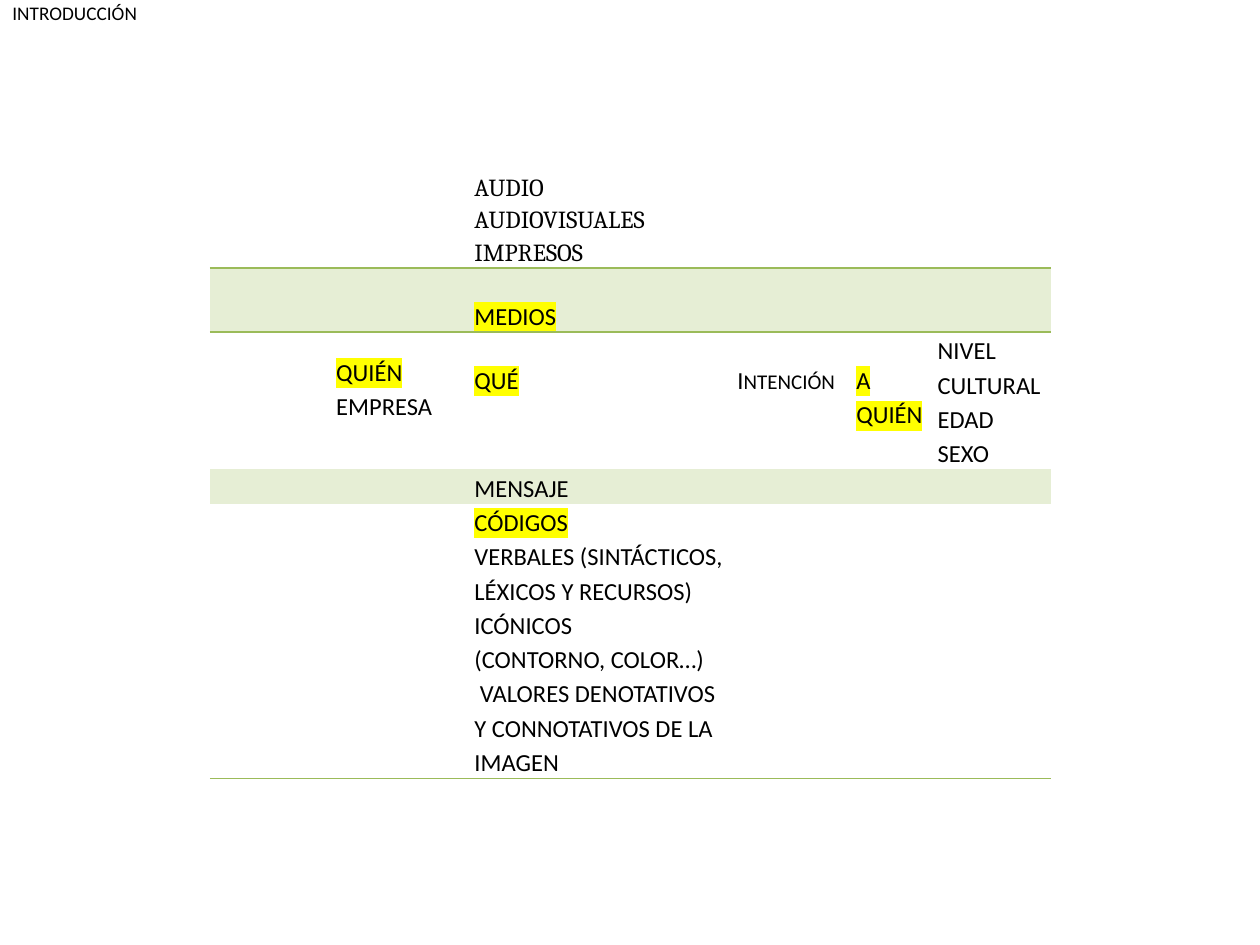
from dataclasses import dataclass

from lxml import etree
from pptx import Presentation
from pptx.dml.color import RGBColor
from pptx.enum.dml import MSO_THEME_COLOR
from pptx.oxml.ns import qn
from pptx.util import Pt

TEXT_COLOR = MSO_THEME_COLOR.TEXT_1
NO_STYLE_NO_GRID = "{2D5ABB26-0587-4C30-8999-92F81FD0307C}"


@dataclass(frozen=True)
class Theme:
    band: str = "E6EED5"
    rule: str = "9BBB59"
    marker: str = "FFFF00"
    sans: str = "Calibri"
    serif: str = "Cambria"
    title: float = 11
    body: float = 14
    small: float = 12


theme = Theme()


def add_color(parent, tag, color):
    """Append a DrawingML element that holds one RGB colour."""
    el = etree.SubElement(parent, qn(tag))
    etree.SubElement(el, qn("a:srgbClr"), val=color)
    return el


def add_rule(cell, side):
    """Draw a thin rule on one side of a cell: lnT or lnB."""
    tc_pr = cell._tc.get_or_add_tcPr()
    ln = etree.Element(qn(f"a:{side}"), w=str(Pt(1)))
    add_color(ln, "a:solidFill", theme.rule)
    tc_pr.insert(0, ln)


prs = Presentation()
prs.slide_width, prs.slide_height = Pt(720), Pt(540)
s = prs.slides.add_slide(prs.slide_layouts[6])

# Communication scheme: each paragraph is a list of (text, size, marked) runs
col_widths = [68.5, 69, 9.75, 150.25, 68, 46.5, 68.5]
row_heights = [56, 36.5, 78.5, 19.6, 157]
BODY = theme.body
contents = {
    (0, 3): [[("AUDIO", BODY, False)], [("AUDIOVISUALES", BODY, False)],
             [("IMPRESOS", BODY, False)]],
    (1, 3): [[("MEDIOS", BODY, True)]],
    (2, 1): [[("QUIÉN", BODY, True)], [("EMPRESA", BODY, False)]],
    (2, 3): [[("QUÉ", BODY, True)]],
    (2, 4): [[("I", BODY, False), ("NTENCIÓN", theme.small, False)]],
    (2, 5): [[("A QUIÉN", BODY, True)]],
    (2, 6): [[("NIVEL CULTURAL", BODY, False)], [("EDAD", BODY, False)],
             [("SEXO", BODY, False)]],
    (3, 3): [[("MENSAJE", BODY, False)]],
    (4, 3): [[("CÓDIGOS", BODY, True)],
             [("VERBALES (SINTÁCTICOS, LÉXICOS Y RECURSOS)", BODY, False)],
             [("ICÓNICOS", BODY, False)],
             [("(CONTORNO, COLOR…)", BODY, False)],
             [(" VALORES DENOTATIVOS Y CONNOTATIVOS DE LA IMAGEN", BODY, False)]],
}
top_margins = {(1, 3): 17, (2, 1): 12.5, (2, 3): 17, (2, 4): 17, (2, 5): 17}
banded_rows = (1, 3)

frame = s.shapes.add_table(len(row_heights), len(col_widths), Pt(120), Pt(97.2),
                           Pt(sum(col_widths)), Pt(sum(row_heights)))
table = frame.table
table.first_row = table.horz_banding = False
table._tbl.tblPr.find(qn("a:tableStyleId")).text = NO_STYLE_NO_GRID
for column, width in zip(table.columns, col_widths):
    column.width = Pt(width)

for i, height in enumerate(row_heights):
    table.rows[i].height = Pt(height)
    for j in range(len(col_widths)):
        cell = table.cell(i, j)
        cell.margin_left = cell.margin_right = Pt(3.6)
        cell.margin_top = Pt(top_margins.get((i, j), 0))
        cell.margin_bottom = 0
        if i in banded_rows:
            cell.fill.solid()
            cell.fill.fore_color.rgb = RGBColor.from_string(theme.band)
        else:
            cell.fill.background()
        if i == 1:
            add_rule(cell, "lnT")
        elif i == 0 or i == len(row_heights) - 1:
            add_rule(cell, "lnB")

        tf = cell.text_frame
        for n, runs in enumerate(contents.get((i, j), [[]])):
            p = tf.add_paragraph() if n else tf.paragraphs[0]
            p.line_spacing = 1.15 if runs else 1.0
            p.font.size = Pt(BODY if runs else theme.small)
            p.font.name = theme.serif if i == 0 else theme.sans
            p.font.color.theme_color = TEXT_COLOR
            for text, size, marked in runs:
                r = p.add_run()
                r.text = text
                r.font.size = Pt(size)
                if marked:
                    add_color(r.font._element, "a:highlight", theme.marker)

# Slide heading
sp = s.shapes.add_textbox(0, 0, Pt(720), Pt(36))
tf = sp.text_frame
tf.word_wrap = True
tf.margin_top = Pt(1)
p = tf.paragraphs[0]
p.text = "INTRODUCCIÓN"
p.font.size = Pt(theme.title)
p.font.name = theme.sans
p.font.color.theme_color = TEXT_COLOR

prs.save("out.pptx")
